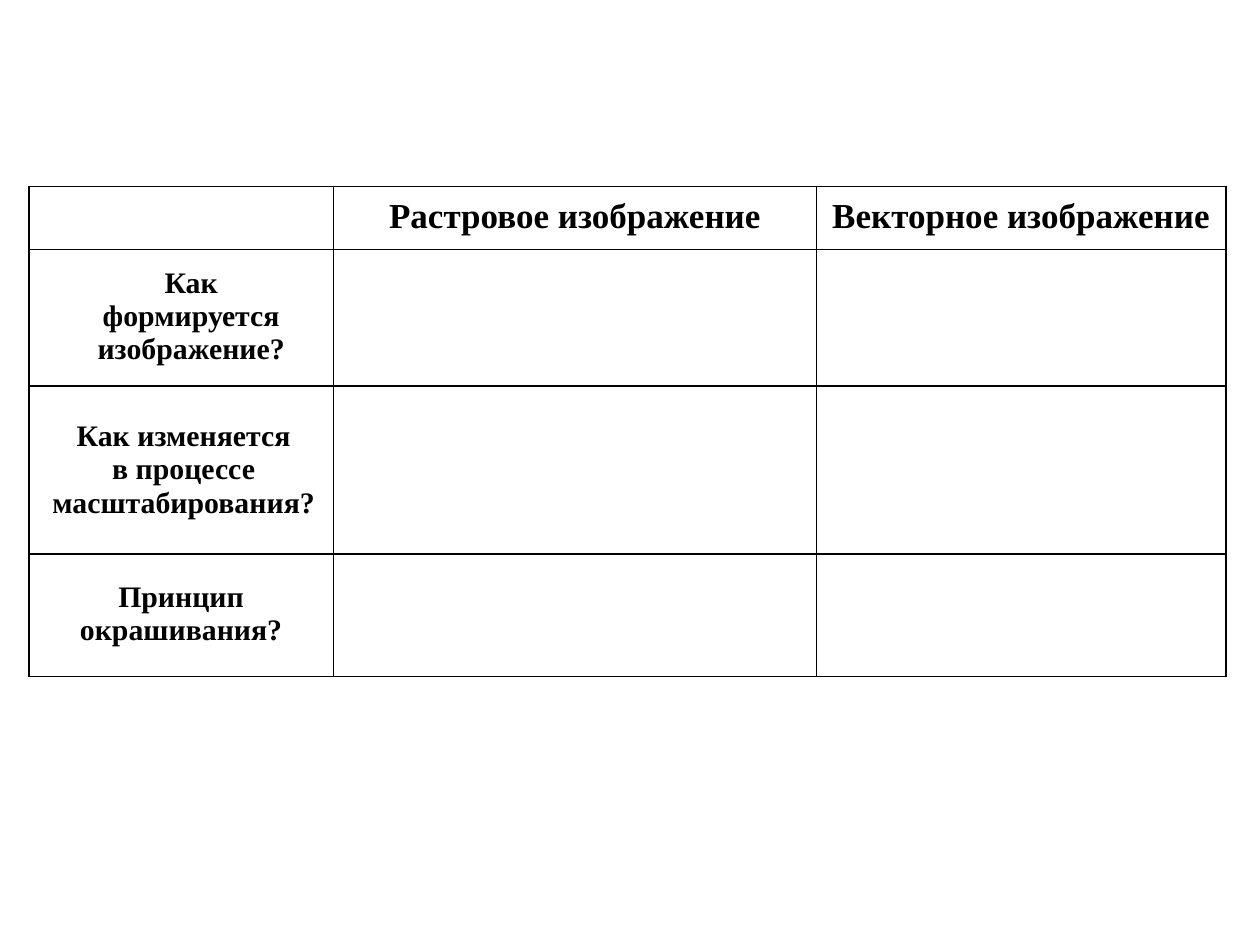
from pptx import Presentation
from pptx.dml.color import RGBColor
from pptx.enum.text import MSO_ANCHOR, PP_ALIGN
from pptx.oxml import parse_xml
from pptx.oxml.ns import nsdecls
from pptx.util import Pt

BLACK = RGBColor(0, 0, 0)
WHITE = RGBColor(255, 255, 255)
CENTER = PP_ALIGN.CENTER
MIDDLE = MSO_ANCHOR.MIDDLE
FONT = "Times New Roman"
BLANK_LAYOUT = 6

COLUMN_WIDTHS = [174, 276, 234]
ROW_HEIGHTS = [36, 78, 96, 70]
HEADINGS = ["Растровое изображение", "Векторное изображение"]
QUESTIONS = [
    ("Как\nформируется\nизображение?", (14.4, 0, 2.9, 1.4)),
    ("Как изменяется\nв процессе\nмасштабирования?", (5.8, 0, 2.9, 0)),
    ("Принцип\nокрашивания?", (2.9, 0, 2.9, 1.4)),
]


def write_text(cell, text, *, size, margins):
    """Write bold centred lines into a cell, with margins as left, top, right, bottom."""
    cell.margin_left, cell.margin_top, cell.margin_right, cell.margin_bottom = map(Pt, margins)
    cell.vertical_anchor = MIDDLE
    cell.text_frame.text = text
    for paragraph in cell.text_frame.paragraphs:
        paragraph.alignment = CENTER
        font = paragraph.runs[0].font
        font.name = FONT
        font.size = Pt(size)
        font.bold = True
        font.color.rgb = BLACK


def style_cell(cell):
    """Give a cell a white fill and thin black borders."""
    cell.fill.solid()
    cell.fill.fore_color.rgb = WHITE
    properties = cell._tc.get_or_add_tcPr()
    for index, side in enumerate(("lnL", "lnR", "lnT", "lnB")):
        border = parse_xml(
            f'<a:{side} {nsdecls("a")} w="{Pt(1)}"><a:solidFill>'
            f'<a:srgbClr val="{BLACK}"/></a:solidFill></a:{side}>'
        )
        properties.insert(index, border)


def add_comparison_table(slide, left, top, width, height):
    """Add the table comparing raster and vector images in the given box."""
    shape = slide.shapes.add_table(
        len(ROW_HEIGHTS), len(COLUMN_WIDTHS), Pt(left), Pt(top), Pt(width), Pt(height)
    )
    table = shape.table
    table.first_row = False
    table.horz_banding = False
    for column, share in zip(table.columns, COLUMN_WIDTHS):
        column.width = Pt(width * share / sum(COLUMN_WIDTHS))
    for row, share in zip(table.rows, ROW_HEIGHTS):
        row.height = Pt(height * share / sum(ROW_HEIGHTS))
    for cell in table.iter_cells():
        style_cell(cell)
    for column_index, heading in enumerate(HEADINGS, start=1):
        write_text(table.cell(0, column_index), heading, size=20, margins=(1.4, 0, 1.4, 1.4))
    for row_index, (question, margins) in enumerate(QUESTIONS, start=1):
        write_text(table.cell(row_index, 0), question, size=17, margins=margins)


def main():
    """Build the slide and save the presentation."""
    presentation = Presentation()
    presentation.slide_width = Pt(720)
    presentation.slide_height = Pt(540)
    slide = presentation.slides.add_slide(presentation.slide_layouts[BLANK_LAYOUT])
    add_comparison_table(slide, 16.5, 106.5, sum(COLUMN_WIDTHS), sum(ROW_HEIGHTS))
    presentation.save("out.pptx")


if __name__ == "__main__":
    main()
